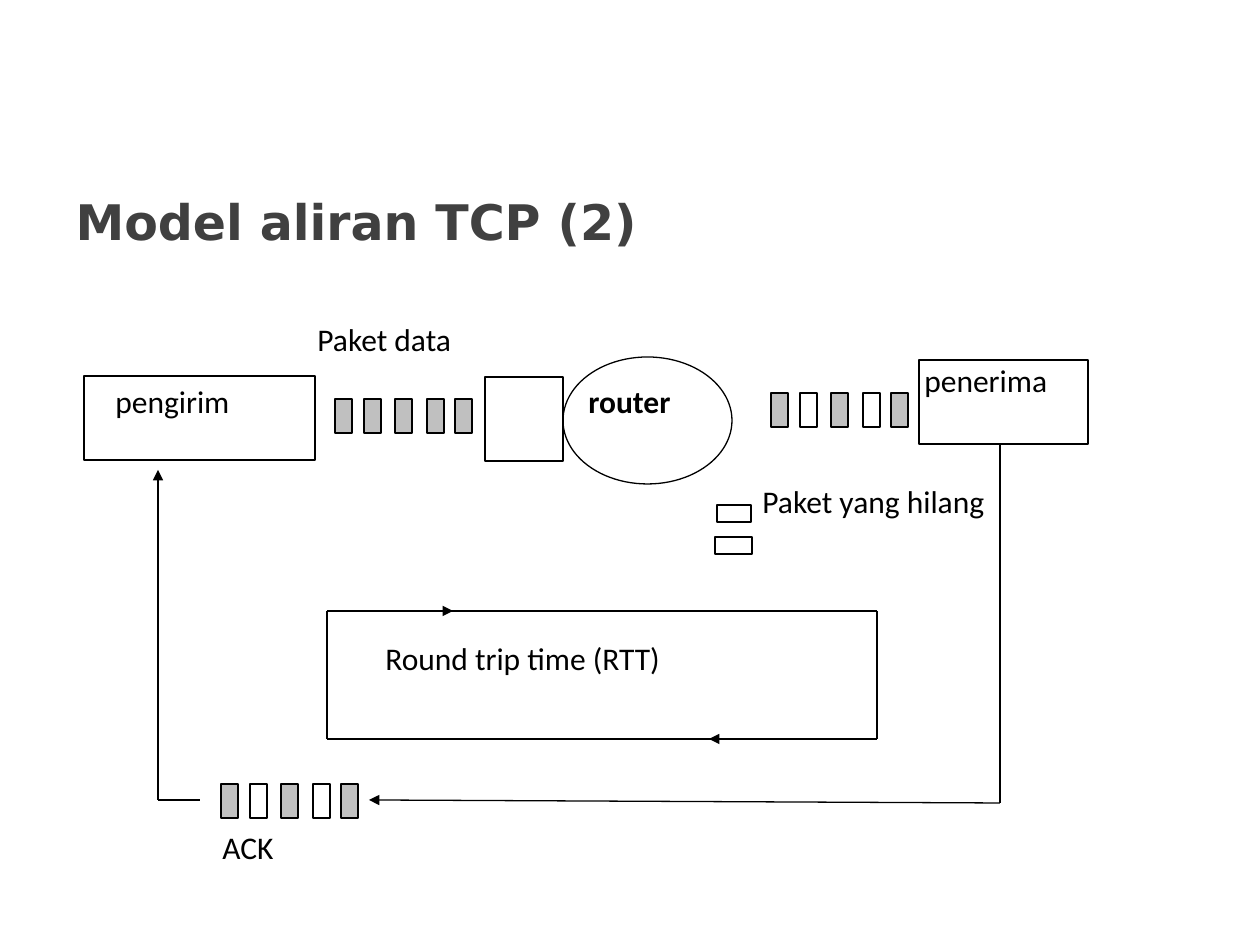
import pptx
import pptx.util
import pptx.dml.color
import pptx.enum.shapes
import pptx.enum.text
import pptx.oxml
import pptx.oxml.ns

RGB = pptx.dml.color.RGBColor
BLACK = RGB(0, 0, 0)
WHITE = RGB(255, 255, 255)
GREY = RGB(0xC0, 0xC0, 0xC0)
DARK = RGB(0x40, 0x40, 0x40)
SHAPE = pptx.enum.shapes.MSO_SHAPE
ALIGN = pptx.enum.text.PP_ALIGN
ANCHOR = pptx.enum.text.MSO_ANCHOR
LINE = pptx.util.Pt(0.75)
STEPS = (0, 29, 60, 92, 120)
FULL = (GREY,) * 5
MIXED = (GREY, WHITE, GREY, WHITE, GREY)


def px(n):
    return pptx.util.Inches(n / 126)


def style(par, text, color=BLACK, **form):
    run = par.add_run()
    run.text = text
    for key, val in form.items():
        setattr(run.font, key, val)
    run.font.color.rgb = color


def title(slide, text, x, y, w, h):
    box = slide.shapes.title
    for key, val in dict(left=x, top=y, width=w, height=h).items():
        setattr(box, key, px(val))
    frame = box.text_frame
    frame.vertical_anchor = ANCHOR.MIDDLE
    par = frame.paragraphs[0]
    par.alignment = ALIGN.LEFT
    style(par, text, DARK, name="DejaVu Sans", size=pptx.util.Pt(28), bold=True)


def label(slide, text, x, y, w, h, bold=False):
    box = slide.shapes.add_textbox(px(x), px(y), px(w), px(h))
    frame = box.text_frame
    frame.word_wrap = True
    par = frame.paragraphs[0]
    par.space_after = pptx.util.Pt(10)
    style(par, text, name="Calibri", size=pptx.util.Pt(18), bold=bold)


def block(slide, x, y, w, h, fill=None, kind=SHAPE.RECTANGLE):
    item = slide.shapes.add_shape(kind, px(x), px(y), px(w), px(h))
    item.shadow.inherit = False
    if fill is None:
        item.fill.background()
    else:
        item.fill.solid()
        item.fill.fore_color.rgb = fill
    item.line.color.rgb = BLACK
    item.line.width = LINE


def train(slide, x, y, fills):
    for step, fill in zip(STEPS, fills):
        block(slide, x + step, y, 17, 34, fill)


def link(slide, start, end, arrow=False):
    item = slide.shapes.add_connector(
        pptx.enum.shapes.MSO_CONNECTOR.STRAIGHT,
        px(start[0]), px(start[1]), px(end[0]), px(end[1]))
    item.line.color.rgb = BLACK
    item.line.width = LINE
    if arrow:
        tip = pptx.oxml.parse_xml(
            f'<a:tailEnd {pptx.oxml.ns.nsdecls("a")} type="triangle"/>')
        item.line._get_or_add_ln().append(tip)
    item._element.spPr.append(
        pptx.oxml.parse_xml(f'<a:effectLst {pptx.oxml.ns.nsdecls("a")}/>'))


def loop(slide, x, y, right, base):
    ends = ((x, y), (right, y), (right, base), (x, base))
    for start, end in zip(ends, ends[1:] + ends[:1]):
        link(slide, start, end)
    link(slide, (x + 42, y), (x + 126, y), True)
    link(slide, (right - 84, base), (right - 168, base), True)


def main():
    deck = pptx.Presentation()
    deck.slide_width, deck.slide_height = px(1260), px(945)
    slide = deck.slides.add_slide(deck.slide_layouts[5])
    title(slide, "Model aliran TCP (2)", 63, 158, 1128, 126)

    block(slide, 84, 376, 231, 84)
    label(slide, "pengirim", 103, 376, 296, 84)
    train(slide, 335, 399, FULL)
    label(slide, "Paket data", 305, 314, 310, 110)

    block(slide, 485, 377, 78, 84, WHITE)
    block(slide, 563, 357, 169, 127, kind=SHAPE.OVAL)
    label(slide, "router", 576, 376, 212, 84, True)

    train(slide, 771, 393, MIXED)
    block(slide, 919, 360, 169, 84)
    label(slide, "penerima", 912, 355, 253, 84)

    block(slide, 717, 505, 34, 17, WHITE)
    block(slide, 715, 537, 37, 17, WHITE)
    label(slide, "Paket yang hilang", 750, 476, 296, 163)

    loop(slide, 327, 611, 877, 739)
    label(slide, "Round trip time (RTT)", 373, 633, 465, 84)

    link(slide, (1000, 445), (1000, 803))
    link(slide, (1000, 803), (369, 800), True)
    train(slide, 221, 784, MIXED)
    label(slide, "ACK", 210, 822, 169, 78)
    link(slide, (200, 800), (158, 800))
    link(slide, (158, 800), (158, 470), True)
    deck.save("out.pptx")


if __name__ == "__main__":
    main()
